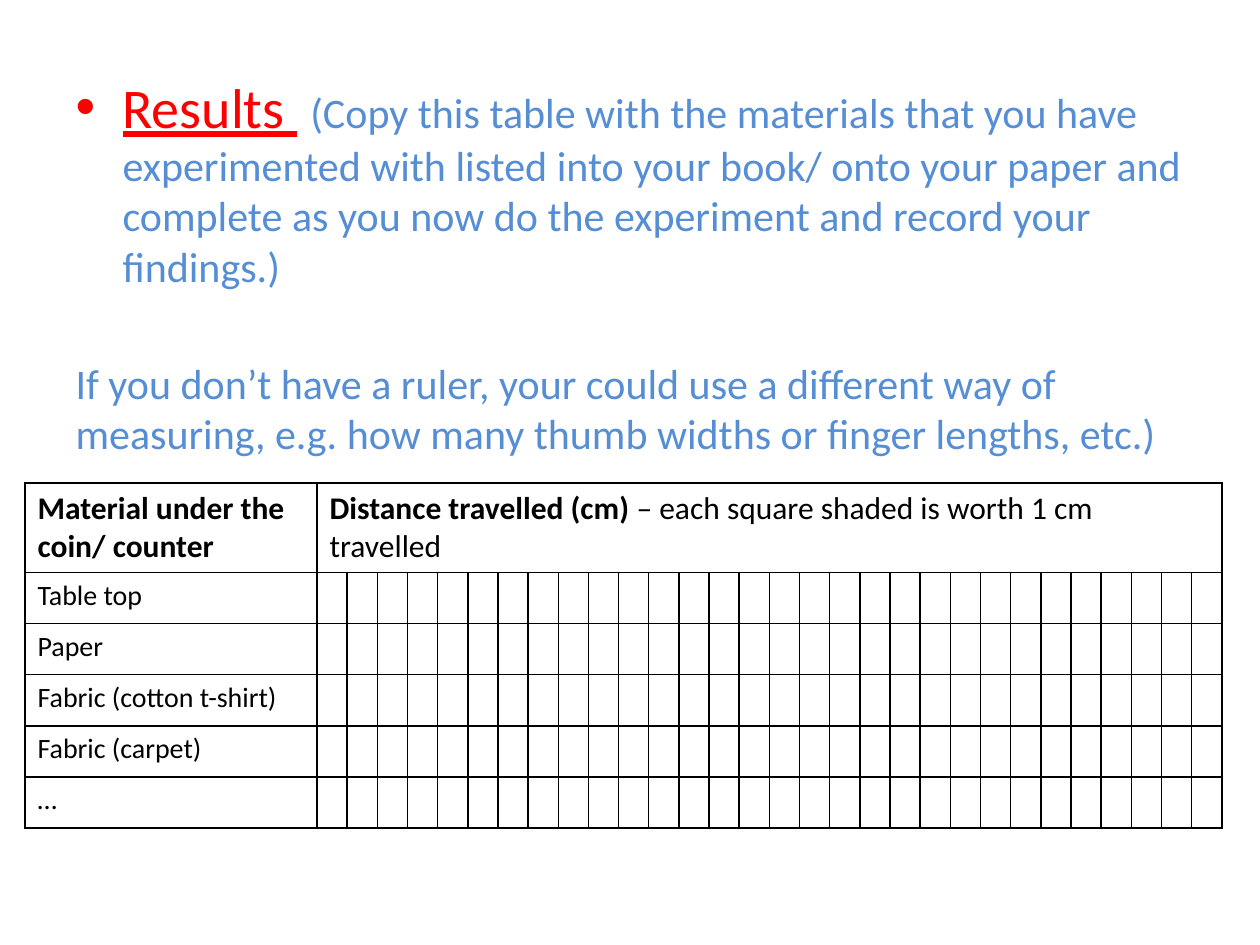
from lxml.etree import SubElement
from pptx import Presentation
from pptx.dml.color import RGBColor
from pptx.oxml.ns import qn
from pptx.util import Emu, Pt

PX_PER_INCH = 126
BLACK = RGBColor(0x00, 0x00, 0x00)
WHITE = RGBColor(0xFF, 0xFF, 0xFF)
RED = RGBColor(0xFF, 0x00, 0x00)
BLUE = RGBColor(0x55, 0x8E, 0xD5)

MATERIALS = ["Table top", "Paper", "Fabric (cotton t-shirt)", "Fabric (carpet)", "…"]
SQUARES = 30

HEADING = {"size": Pt(32), "color": RED}
INSTRUCTION = {"size": Pt(24), "color": BLUE}
HEADER = {"size": Pt(18), "color": BLACK, "bold": True}
HEADER_NOTE = {**HEADER, "bold": False}
MATERIAL = {"size": Pt(16), "color": BLACK}


def px(length):
    return Emu(round(length * 914400 / PX_PER_INCH))


def add_run(paragraph, text, style):
    run = paragraph.add_run()
    run.text = text
    run.font.name = "Calibri"
    for attribute, value in style.items():
        if attribute == "color":
            run.font.color.rgb = value
        else:
            setattr(run.font, attribute, value)


def set_indent(paragraph, margin, indent, bullet=None):
    properties = paragraph._p.get_or_add_pPr()
    properties.set("marL", str(px(margin)))
    properties.set("indent", str(px(indent)))
    if bullet:
        SubElement(properties, qn("a:buFont"), typeface="Arial")
        SubElement(properties, qn("a:buChar"), char=bullet)
    else:
        SubElement(properties, qn("a:buNone"))


def place_instructions(body, left, top, width, height):
    place = {"left": left, "top": top, "width": width, "height": height}
    for attribute, value in place.items():
        setattr(body, attribute, px(value))

    # Bulleted heading with the task
    task = body.text_frame.paragraphs[0]
    set_indent(task, 47, -47, "•")
    add_run(task, "Results ", {**HEADING, "underline": True})
    add_run(task, " ", HEADING)
    add_run(task, "(Copy this table with the materials that you have experimented with "
            "listed into your book/ onto your paper and complete as you now do the "
            "experiment and record your findings.)", INSTRUCTION)

    # Advice set apart below the task
    advice = body.text_frame.add_paragraph()
    set_indent(advice, 0, 0)
    advice.space_before = Pt(38)
    add_run(advice, "If you don’t have a ruler, your could use a different way of "
            "measuring, e.g. how many thumb widths or finger lengths, etc.)", INSTRUCTION)


def format_cell(cell):
    properties = cell._tc.get_or_add_tcPr()
    for side in ("lnL", "lnR", "lnT", "lnB"):
        border = SubElement(properties, qn(f"a:{side}"), w=str(Pt(1)))
        fill = SubElement(border, qn("a:solidFill"))
        SubElement(fill, qn("a:srgbClr"), val=str(BLACK))
    cell.fill.solid()
    cell.fill.fore_color.rgb = WHITE


def add_results_table(slide, left, top, width, header_height, row_height, material_width):
    height = header_height + row_height * len(MATERIALS)
    results = slide.shapes.add_table(len(MATERIALS) + 1, SQUARES + 1, px(left), px(top),
                                     px(width), px(height)).table
    results.first_row = results.horz_banding = False

    # Grid of one material column and equal squares
    square_width = (width - material_width) / SQUARES
    for index, column in enumerate(results.columns):
        column.width = px(square_width if index else material_width)
    for index, row in enumerate(results.rows):
        row.height = px(row_height if index else header_height)
    for cell in results.iter_cells():
        format_cell(cell)

    # Header row
    results.cell(0, 1).merge(results.cell(0, SQUARES))
    add_run(results.cell(0, 0).text_frame.paragraphs[0],
            "Material under the coin/ counter", HEADER)
    distance = results.cell(0, 1).text_frame.paragraphs[0]
    add_run(distance, "Distance travelled (cm) ", HEADER)
    add_run(distance, "– each square shaded is worth 1 cm travelled", HEADER_NOTE)

    # Material names
    for row, material in enumerate(MATERIALS, start=1):
        add_run(results.cell(row, 0).text_frame.paragraphs[0], material, MATERIAL)


def main():
    presentation = Presentation()
    presentation.slide_width, presentation.slide_height = px(1260), px(945)
    slide = presentation.slides.add_slide(presentation.slide_layouts[1])

    # The slide has body text but no title
    title = slide.shapes.title._element
    title.getparent().remove(title)

    place_instructions(slide.placeholders[1], 63, 66, 1134, 779)
    add_results_table(slide, 25, 483, 1198, 89, 51, 292)
    presentation.save("out.pptx")


if __name__ == "__main__":
    main()
